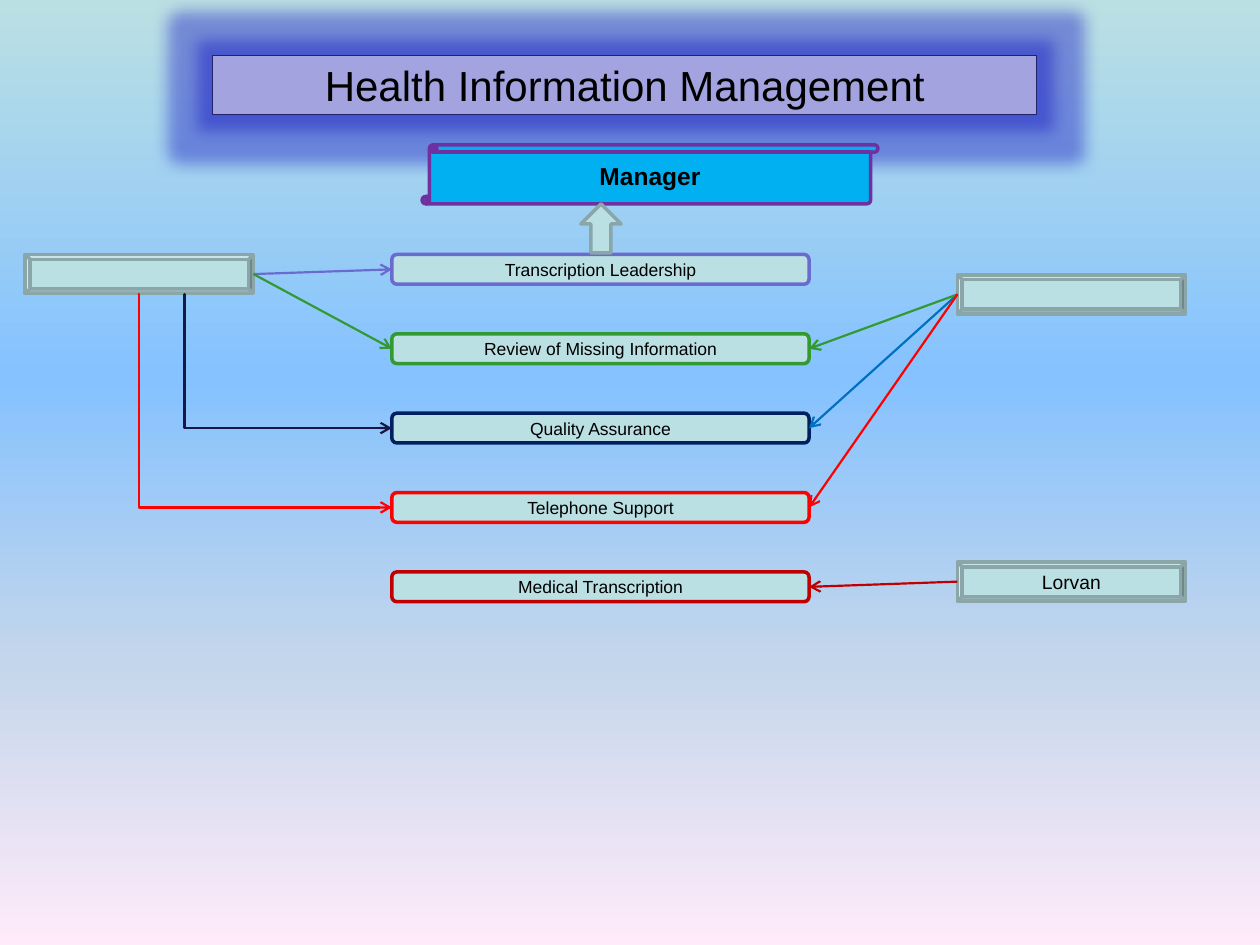
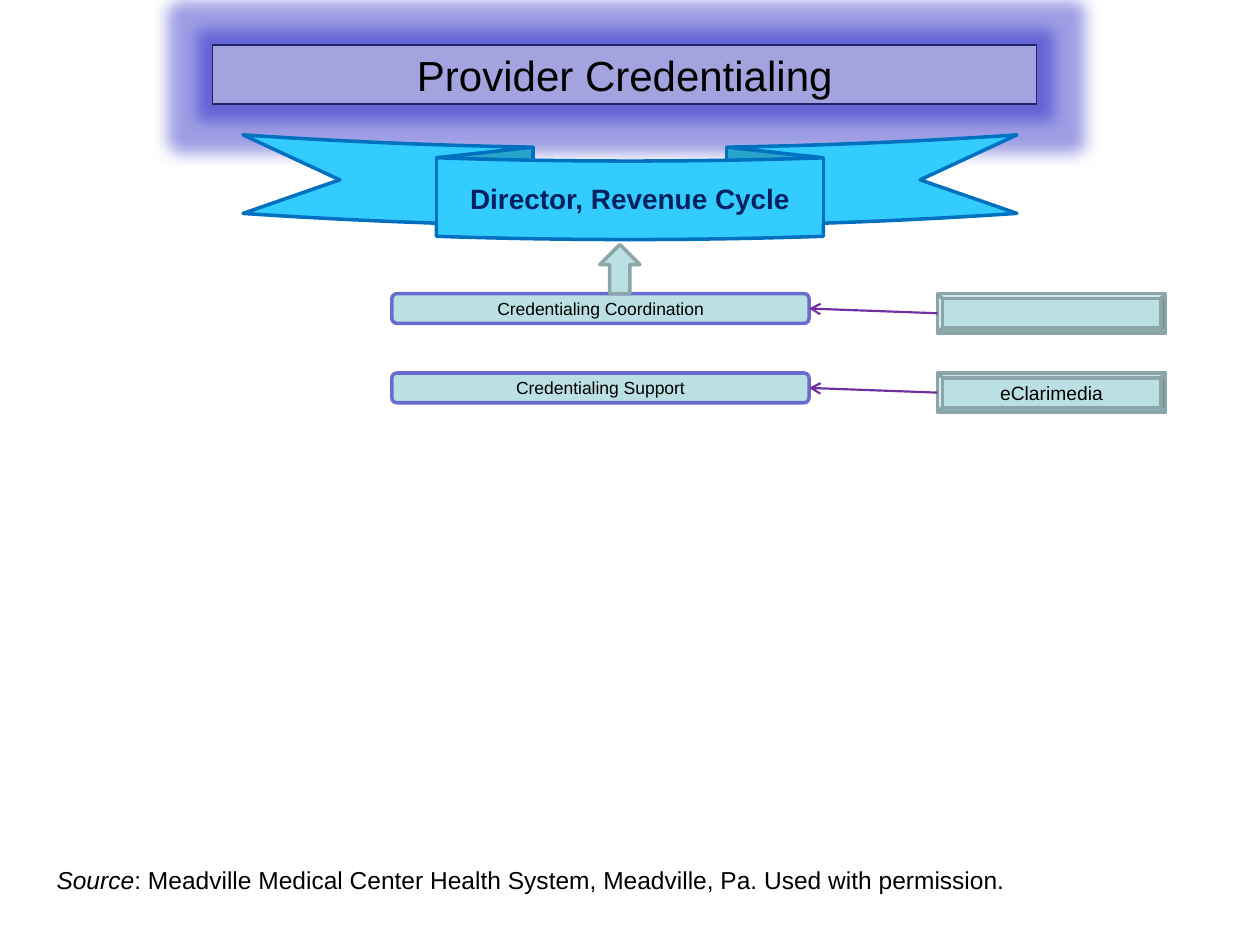
from dataclasses import dataclass

from lxml import etree
from pptx import Presentation
from pptx.dml.color import RGBColor
from pptx.enum.shapes import MSO_CONNECTOR, MSO_SHAPE
from pptx.enum.text import MSO_ANCHOR, PP_ALIGN
from pptx.oxml.ns import qn
from pptx.util import Cm, Pt

RECTANGLE = MSO_SHAPE.RECTANGLE
SCROLL = MSO_SHAPE.VERTICAL_SCROLL
RIBBON = MSO_SHAPE.CURVED_DOWN_RIBBON
TASK_SHAPE = MSO_SHAPE.FLOWCHART_ALTERNATE_PROCESS
BEVEL = MSO_SHAPE.BEVEL
UP_ARROW = MSO_SHAPE.UP_ARROW
STRAIGHT, ELBOW = MSO_CONNECTOR.STRAIGHT, MSO_CONNECTOR.ELBOW
CENTER, MIDDLE = PP_ALIGN.CENTER, MSO_ANCHOR.MIDDLE
LEFT_SIDE, RIGHT_SIDE = 1, 3


@dataclass(frozen=True)
class Theme:
    font: str = "Arial"
    black: str = "000000"
    white: str = "FFFFFF"
    pale: str = "BBE0E3"
    pale_edge: str = "8AA6A8"
    lilac: str = "A3A3E0"
    indigo: str = "222267"
    glow: str = "0D0DBF"
    violet: str = "6B6BCF"
    purple: str = "7030A0"
    green: str = "339933"
    navy: str = "002060"
    midnight: str = "171745"
    red: str = "FF0000"
    crimson: str = "C00000"
    blue: str = "0070C0"
    sky: str = "00B0F0"
    cyan: str = "33CCFF"
    title_size: float = 24
    director_size: float = 16
    manager_size: float = 14
    source_size: float = 14
    team_size: float = 11
    task_size: float = 10
    border: float = 2
    thin_border: float = 0.75
    link_width: float = 1.25


THEME = Theme()
SKY_STOPS = [(0, THEME.pale), (40, "85C2FF"), (70, "C4D6EB"), (100, "FFEBFA")]

# Shared grid, in centimetres
TASK_LEFT, TASK_WIDTH, TASK_HEIGHT, TASK_PITCH = 7.9, 8.41, 0.6, 1.6
TEAM_WIDTH, TEAM_HEIGHT = 4.6, 0.79


@dataclass(frozen=True)
class Place:
    left: float
    top: float
    width: float
    height: float


@dataclass(frozen=True)
class Look:
    fill: str
    line: str
    width: float = THEME.border


@dataclass(frozen=True)
class Type:
    size: float
    color: str = THEME.black
    bold: bool = False
    italic: bool = False


@dataclass(frozen=True)
class Task:
    label: str
    color: str


PALE_LOOK = Look(THEME.pale, THEME.pale_edge)


def write(para, text: str, style: Type) -> None:
    span = para.add_run()
    span.text = text
    formats = {"name": THEME.font, "size": Pt(style.size),
               "bold": style.bold, "italic": style.italic}
    for name, value in formats.items():
        setattr(span.font, name, value)
    span.font.color.rgb = RGBColor.from_string(style.color)


def add_box(page, preset, place: Place, look: Look,
            text: str = "", style: Type = Type(THEME.task_size)):
    box = page.shapes.add_shape(preset, Cm(place.left), Cm(place.top),
                                Cm(place.width), Cm(place.height))
    box.fill.solid()
    box.fill.fore_color.rgb = RGBColor.from_string(look.fill)
    box.line.color.rgb = RGBColor.from_string(look.line)
    box.line.width = Pt(look.width)
    box.shadow.inherit = False
    if text:
        box.text_frame.vertical_anchor = MIDDLE
        para = box.text_frame.paragraphs[0]
        para.alignment = CENTER
        write(para, text, style)
    return box


def add_color(parent, color: str):
    return etree.SubElement(parent, qn("a:srgbClr"), val=color)


def add_title(page, text: str, top: float) -> None:
    box = add_box(page, RECTANGLE, Place(4.29, top, 16.61, 1.19),
                  Look(THEME.lilac, THEME.indigo, THEME.thin_border),
                  text, Type(THEME.title_size))
    effects = box.element.spPr.find(qn("a:effectLst"))
    glow = etree.SubElement(effects, qn("a:glow"), rad=str(Pt(18)))
    etree.SubElement(add_color(glow, THEME.glow), qn("a:alpha"), val="40000")


def add_tasks(page, top: float, tasks: list[Task]) -> list:
    return [add_box(page, TASK_SHAPE,
                    Place(TASK_LEFT, top + row * TASK_PITCH, TASK_WIDTH, TASK_HEIGHT),
                    Look(THEME.pale, task.color), task.label)
            for row, task in enumerate(tasks)]


def add_arrow(page, left: float, top: float) -> None:
    add_box(page, UP_ARROW, Place(left, top, 0.81, 0.99), PALE_LOOK)


def add_team(page, left: float, top: float, name: str = ""):
    return add_box(page, BEVEL, Place(left, top, TEAM_WIDTH, TEAM_HEIGHT),
                   PALE_LOOK, name, Type(THEME.team_size))


def add_connector(page, kind, start: tuple[int, int], end: tuple[int, int], color: str):
    connector = page.shapes.add_connector(kind, *start, *end)
    connector.line.color.rgb = RGBColor.from_string(color)
    connector.line.width = Pt(THEME.link_width)
    properties = connector.element.spPr
    etree.SubElement(properties.find(qn("a:ln")), qn("a:tailEnd"), type="arrow")
    etree.SubElement(properties, qn("a:effectLst"))
    return connector


def link(page, team, task, color: str) -> None:
    """Straight arrow from a team to the facing side of a task."""
    from_left = team.left < task.left
    start_x = team.left + team.width if from_left else team.left
    end_x = task.left if from_left else task.left + task.width
    connector = add_connector(page, STRAIGHT,
                              (start_x, team.top + team.height // 2),
                              (end_x, task.top + task.height // 2), color)
    connector.end_connect(task, LEFT_SIDE if from_left else RIGHT_SIDE)


def link_down(page, x: float, team, task, color: str) -> None:
    """Bent arrow that drops from a team and then runs right to a task."""
    connector = add_connector(page, ELBOW, (Cm(x), team.top + team.height),
                              (task.left, task.top + task.height // 2), color)
    guides = connector.element.spPr.find(qn("a:prstGeom")).get_or_add_avLst()
    etree.SubElement(guides, qn("a:gd"), name="adj1", fmla="val 300")


def fill_sky(page) -> None:
    fill = page.background.fill
    fill.gradient()
    fill.gradient_angle = 270
    stops = page.background.fill.gradient_stops
    stop_list = next(page.element.iter(qn("a:gsLst")))
    for old_stop in list(stop_list)[:len(stops)]:
        stop_list.remove(old_stop)
    for percent, color in SKY_STOPS:
        add_color(etree.SubElement(stop_list, qn("a:gs"), pos=str(percent * 1000)), color)


def build_information_page(page) -> None:
    fill_sky(page)
    add_title(page, "Health Information Management", 1.12)
    add_box(page, SCROLL, Place(8.51, 2.92, 9.19, 1.19),
            Look(THEME.sky, THEME.purple), "Manager",
            Type(THEME.manager_size, bold=True))

    # Tasks and teams
    leadership, review, quality, support, transcription = add_tasks(page, 5.13, [
        Task("Transcription Leadership", THEME.violet),
        Task("Review of Missing Information", THEME.green),
        Task("Quality Assurance", THEME.navy),
        Task("Telephone Support", THEME.red),
        Task("Medical Transcription", THEME.crimson),
    ])
    add_arrow(page, 11.71, 4.11)
    left_team = add_team(page, 0.51, 5.13)
    right_team = add_team(page, 19.3, 5.54)
    vendor = add_team(page, 19.3, 11.33, "Lorvan")

    # Who does what
    for team, task, color in [
        (left_team, leadership, THEME.violet),
        (left_team, review, THEME.green),
        (right_team, quality, THEME.blue),
        (right_team, review, THEME.green),
        (right_team, support, THEME.red),
        (vendor, transcription, THEME.crimson),
    ]:
        link(page, team, task, color)
    link_down(page, 3.71, left_team, quality, THEME.midnight)
    link_down(page, 2.79, left_team, support, THEME.red)


def build_credentialing_page(page) -> None:
    page.background.fill.solid()
    page.background.fill.fore_color.rgb = RGBColor.from_string(THEME.white)
    add_title(page, "Provider Credentialing", 0.91)

    # Tasks, each with its team
    tasks = add_tasks(page, 5.92, [
        Task("Credentialing Coordination", THEME.violet),
        Task("Credentialing Support", THEME.violet),
    ])
    add_arrow(page, 12.09, 4.93)
    for row, (task, name) in enumerate(zip(tasks, ["", "eClarimedia"])):
        team = add_team(page, 18.9, 5.92 + row * TASK_PITCH, name)
        link(page, team, task, THEME.purple)

    add_box(page, RIBBON, Place(4.9, 2.72, 15.6, 2.11),
            Look(THEME.cyan, THEME.blue), "Director, Revenue Cycle",
            Type(THEME.director_size, THEME.navy, bold=True))

    # Source line
    box = page.shapes.add_textbox(Cm(0.89), Cm(17.32), Cm(19.99), Cm(0.86))
    box.text_frame.word_wrap = True
    para = box.text_frame.paragraphs[0]
    write(para, "Source", Type(THEME.source_size, italic=True))
    write(para, ": Meadville Medical Center Health System, Meadville, Pa. "
                "Used with permission.", Type(THEME.source_size))


def main() -> None:
    deck = Presentation()
    deck.slide_width, deck.slide_height = Cm(25.4), Cm(19.05)
    blank = deck.slide_layouts[6]
    for build in (build_information_page, build_credentialing_page):
        build(deck.slides.add_slide(blank))
    deck.save("out.pptx")


if __name__ == "__main__":
    main()
